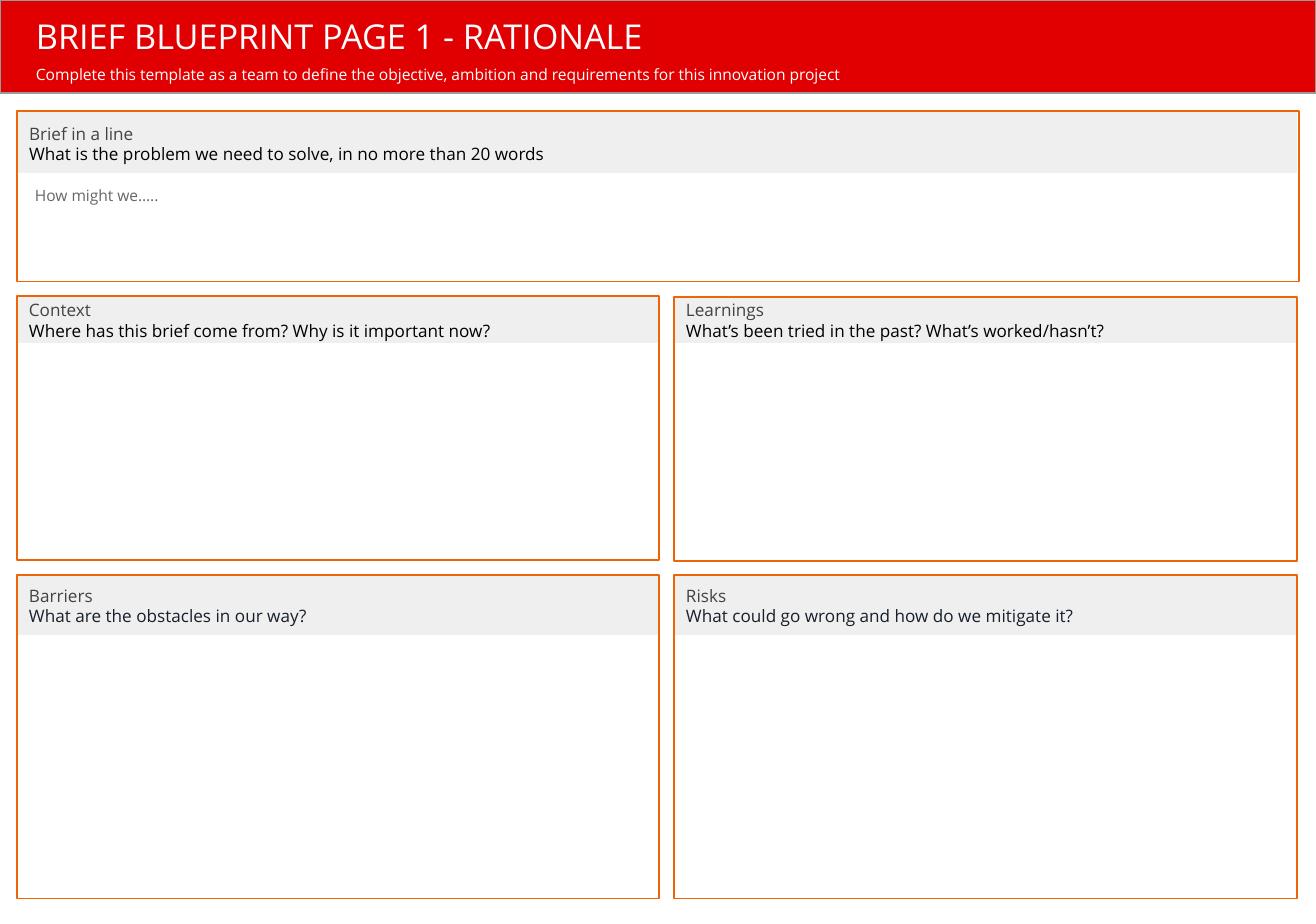
import pptx
import pptx.dml.color
import pptx.enum.shapes
import pptx.enum.text
import pptx.util

EMU_PER_PX = 914400 / 112
FONT = "Open Sans"
ORANGE = "EC6608"
GREY = "EFEFEF"
BLACK = "000000"
NAVY = "16202C"
WHITE = "FFFFFF"
TOP = pptx.enum.text.MSO_ANCHOR.TOP
MIDDLE = pptx.enum.text.MSO_ANCHOR.MIDDLE

LEFT_COLUMN = (17, 642)
RIGHT_COLUMN = (674, 623)
CONTEXT_ROW = (297, 46, 296, 264)
LEARNINGS_ROW = (297, 46, 297, 264)
LOWER_ROW = (576, 59, 575, 324)
PANELS = [
    (LEFT_COLUMN, CONTEXT_ROW, "Context",
     "Where has this brief come from? Why is it important now?", BLACK),
    (RIGHT_COLUMN, LEARNINGS_ROW, "Learnings",
     "What’s been tried in the past? What’s worked/hasn’t?", BLACK),
    (LEFT_COLUMN, LOWER_ROW, "Barriers",
     "What are the obstacles in our way?", NAVY),
    (RIGHT_COLUMN, LOWER_ROW, "Risks",
     "What could go wrong and how do we mitigate it?", NAVY),
]


def px(length):
    return pptx.util.Emu(round(length * EMU_PER_PX))


def color(value):
    return pptx.dml.color.RGBColor.from_string(value)


def add_box(slide, bounds, fill=None, line=None):
    box = slide.shapes.add_shape(
        pptx.enum.shapes.MSO_SHAPE.RECTANGLE, *map(px, bounds))
    box.shadow.inherit = False
    if fill:
        box.fill.solid()
        box.fill.fore_color.rgb = color(fill)
    else:
        box.fill.background()
    if line:
        box.line.color.rgb = color(line)
        box.line.width = pptx.util.Pt(0.75)
    else:
        box.line.fill.background()
    return box


def write_lines(shape, lines, anchor, inset=12):
    frame = shape.text_frame
    frame.word_wrap = True
    frame.auto_size = pptx.enum.text.MSO_AUTO_SIZE.NONE
    frame.vertical_anchor = anchor
    frame.margin_left = frame.margin_right = px(inset)
    frame.margin_top = frame.margin_bottom = px(inset)
    for index, (text, size, text_color) in enumerate(lines):
        paragraph = frame.add_paragraph() if index else frame.paragraphs[0]
        paragraph.alignment = pptx.enum.text.PP_ALIGN.LEFT
        paragraph.space_before = pptx.util.Pt(0)
        run = paragraph.add_run()
        run.text = text
        run.font.name = FONT
        run.font.size = pptx.util.Pt(size)
        run.font.color.rgb = color(text_color)


def add_panel(slide, header, frame, heading, question, question_color, anchor=MIDDLE):
    heading_band = add_box(slide, header, fill=GREY)
    write_lines(heading_band, [(heading, 11, "434343"),
                               (question, 11, question_color)], anchor)
    add_box(slide, frame, line=ORANGE)


def add_banner(slide):
    add_box(slide, (0, 0, 1316, 93), fill="E10001", line="999999")
    title = slide.shapes.title
    title.element.getparent().append(title.element)
    title.left, title.top, title.width, title.height = map(px, (24, 3, 921, 85))
    write_lines(title, [
        ("BRIEF BLUEPRINT PAGE 1 - RATIONALE", 22, WHITE),
        ("Complete this template as a team to define the objective, ambition "
         "and requirements for this innovation project", 10, WHITE),
    ], TOP)
    instruction = title.text_frame.paragraphs[1]
    instruction.line_spacing = 1.5
    instruction.space_after = pptx.util.Pt(17)


def add_hint(slide):
    hint = slide.shapes.add_textbox(*map(px, (24, 175, 408, 41)))
    write_lines(hint, [("How might we…..", 10, "666666")], TOP, inset=11)


def main():
    presentation = pptx.Presentation()
    presentation.slide_width = px(1316)
    presentation.slide_height = px(924)
    slide = presentation.slides.add_slide(presentation.slide_layouts[5])

    add_banner(slide)
    add_panel(slide, (17, 111, 1280, 62), (17, 111, 1282, 171), "Brief in a line",
              "What is the problem we need to solve, in no more than 20 words",
              BLACK, TOP)
    add_hint(slide)
    for (left, width), row, heading, question, question_color in PANELS:
        header_top, header_height, frame_top, frame_height = row
        add_panel(slide, (left, header_top, width, header_height),
                  (left, frame_top, width, frame_height),
                  heading, question, question_color)

    presentation.save("out.pptx")


if __name__ == "__main__":
    main()
